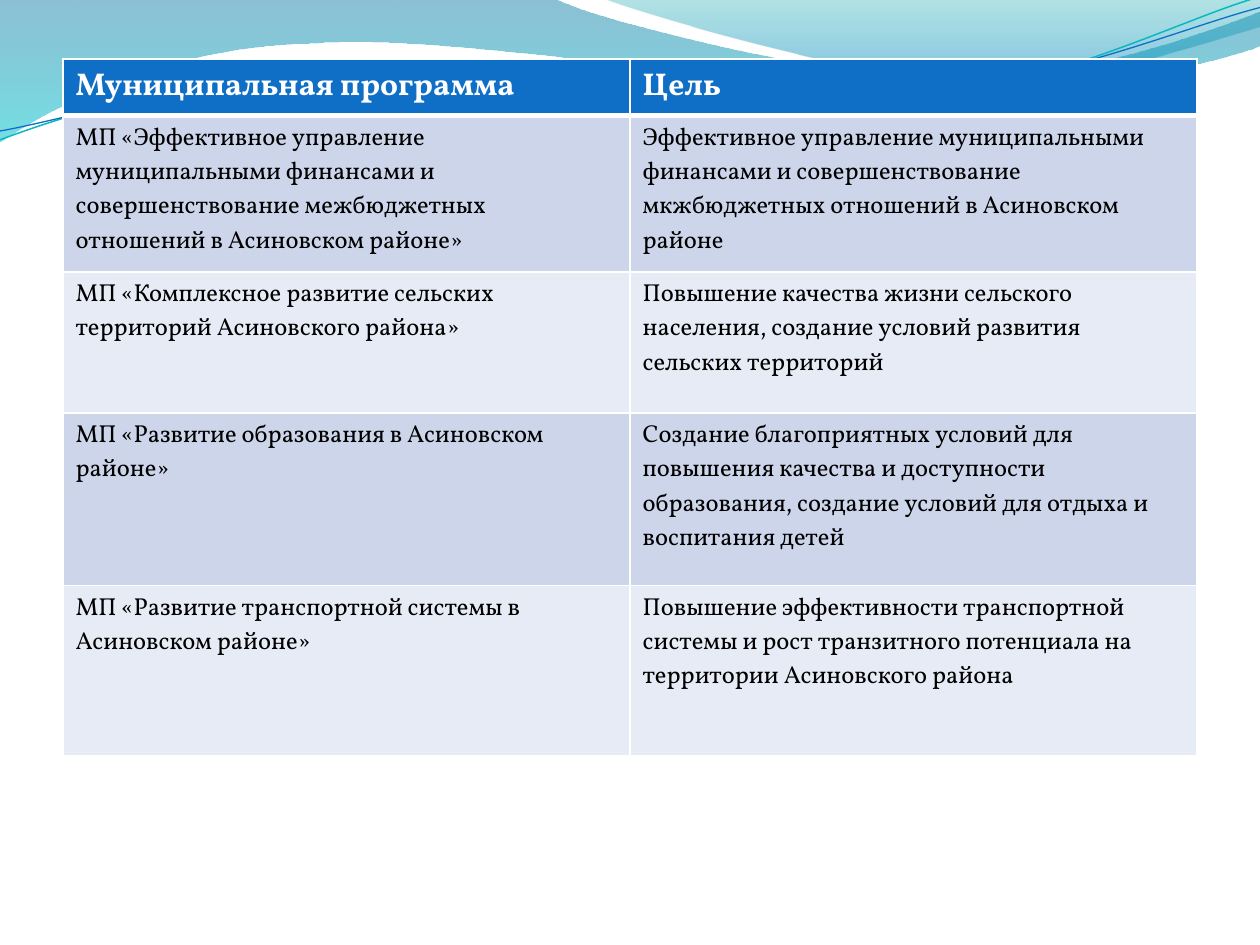
from math import cos, radians, sin

from lxml.etree import SubElement
from pptx import Presentation
from pptx.dml.color import RGBColor
from pptx.oxml import parse_xml
from pptx.oxml.ns import nsdecls, qn
from pptx.util import Inches, Pt

HEADERS = ("Муниципальная программа", "Цель")
PROGRAMS = [
    ("МП «Эффективное управление муниципальными финансами и совершенствование межбюджетных отношений в Асиновском районе»",
     "Эффективное управление муниципальными финансами и совершенствование мкжбюджетных отношений в Асиновском районе"),
    ("МП «Комплексное развитие сельских территорий Асиновского района»",
     "Повышение качества жизни сельского населения, создание условий развития сельских территорий"),
    ("МП «Развитие образования в Асиновском районе»",
     "Создание благоприятных условий для повышения качества и доступности образования, создание условий для отдыха и воспитания детей"),
    ("МП «Развитие транспортной системы в Асиновском районе»",
     "Повышение эффективности транспортной системы и рост транзитного потенциала на территории Асиновского района"),
]
ROW_HEIGHTS = (0.44, 1.24, 1.12, 1.37, 1.35)
TABLE_LEFT, TABLE_TOP, TABLE_WIDTH = 0.5, 0.47, 9

THEME = {
    "font": "Vollkorn",
    "header": {"size": Pt(18), "bold": True, "color": "FFFFFF"},
    "body": {"size": Pt(14), "bold": False, "color": "000000"},
    "header_fill": "0F6FC6",
    "band_fills": ("CCD5EA", "E7EBF5"),
    "border": "FFFFFF",
    "thin": Pt(1),
    "thick": Pt(3),
}

WAVES = [
    {"points": [(0, 0), (4.4, -0.01), (4.76, 0.17, 6.64, 0.63, 7.58, 0.63),
                (8.53, 0.63, 9.58, 0.26, 10, 0.09), (10.01, 0.36),
                (9.83, 0.44, 8.7, 0.76, 7.46, 0.75), (6.22, 0.75, 3.82, 0.28, 2.57, 0.34),
                (1.29, 0.36, 0.46, 0.83, -0.01, 1.13), (0, 0)],
     "stops": [(0, "0074A1", 45), (1, "00C6CF", 55)]},
    {"points": [(4.79, -0.01), (5.09, 0.11, 6.82, 0.62, 7.69, 0.65),
                (8.56, 0.69, 9.61, 0.32, 10, 0.21), (10, 0), (4.79, -0.01)],
     "stops": [(0, "00A1A9", 30), (0.8, "008BBF", 45)]},
    {"points": [(0, 1.11), (0.48, 0.93, 1.58, 0.57, 2.77, 0.52),
                (3.95, 0.47, 5.93, 0.89, 7.13, 0.8), (8.33, 0.71, 9.38, 0.15, 9.98, -0.02)],
     "line": ("0AB8BF", 0.85), "center": (4.99, 0.57), "rotation": -2.7},
    {"points": [(0, 1.04), (0.47, 0.96, 1.64, 0.61, 2.83, 0.56),
                (4.03, 0.51, 5.97, 0.84, 7.17, 0.75), (8.36, 0.67, 9.41, 0.21, 10, 0.06)],
     "line": ("0F6FC6", 0.75), "center": (5, 0.59), "rotation": -2.7},
]


def level(point, center, rotation):
    angle = radians(-rotation)
    center_x, center_y = center
    pairs = [(x - center_x, y - center_y) for x, y in zip(point[::2], point[1::2])]
    return [(Inches(center_x + x * cos(angle) - y * sin(angle)),
             Inches(center_y + x * sin(angle) + y * cos(angle))) for x, y in pairs]


def draw_outline(slide, wave):
    rotation = wave.get("rotation", 0)
    steps = [level(point, wave.get("center", (0, 0)), rotation) for point in wave["points"]]
    start, *anchors = [step[-1] for step in steps]
    builder = slide.shapes.build_freeform(*start)
    builder.add_line_segments(anchors, close="stops" in wave)
    shape = builder.convert_to_shape()
    segments = list(shape.element.spPr.iter(qn("a:lnTo")))
    for segment, step in zip(segments, steps[1:]):
        if len(step) == 3:
            segment.tag = qn("a:cubicBezTo")
            segment.clear()
            for x, y in step:
                point = SubElement(segment, qn("a:pt"))
                point.set("x", str(x - shape.left))
                point.set("y", str(y - shape.top))
    shape.rotation = rotation
    return shape


def add_wave(slide, wave):
    shape = draw_outline(slide, wave)
    shape.shadow.inherit = False
    if "line" in wave:
        color, width = wave["line"]
        shape.fill.background()
        shape.line.color.rgb = RGBColor.from_string(color)
        shape.line.width = Pt(width)
        return
    shape.line.fill.background()
    shape.fill.gradient()
    shape.fill.gradient_angle = 270
    for stop, (position, color, _) in zip(shape.fill.gradient_stops, wave["stops"]):
        stop.position = position
        stop.color.rgb = RGBColor.from_string(color)
    colors = shape.element.spPr.find(qn("a:gradFill")).iter(qn("a:srgbClr"))
    for color_element, (_, _, opacity) in zip(colors, wave["stops"]):
        SubElement(color_element, qn("a:alpha")).set("val", str(opacity * 1000))


def set_borders(cell, widths):
    properties = cell._tc.get_or_add_tcPr()
    for index, (side, width) in enumerate(widths.items()):
        properties.insert(index, parse_xml(
            f'<a:ln{side} {nsdecls("a")} w="{width}"><a:solidFill>'
            f'<a:srgbClr val="{THEME["border"]}"/></a:solidFill></a:ln{side}>'))


def format_cell(cell, text, row):
    is_header = row == 0
    style = THEME["header" if is_header else "body"]
    fill = THEME["header_fill"] if is_header else THEME["band_fills"][(row - 1) % 2]
    cell.text = text
    cell.fill.solid()
    cell.fill.fore_color.rgb = RGBColor.from_string(fill)
    font = cell.text_frame.paragraphs[0].runs[0].font
    for name, value in {"name": THEME["font"], "size": style["size"], "bold": style["bold"]}.items():
        setattr(font, name, value)
    font.color.rgb = RGBColor.from_string(style["color"])
    thin, thick = THEME["thin"], THEME["thick"]
    set_borders(cell, {"L": thin, "R": thin,
                       "T": thick if row == 1 else thin,
                       "B": thick if is_header else thin})


def add_program_table(slide):
    rows = [HEADERS, *PROGRAMS]
    table = slide.shapes.add_table(
        len(rows), len(HEADERS), Inches(TABLE_LEFT), Inches(TABLE_TOP),
        Inches(TABLE_WIDTH), Inches(sum(ROW_HEIGHTS))).table
    for column in table.columns:
        column.width = Inches(TABLE_WIDTH / len(HEADERS))
    for row, (texts, height) in enumerate(zip(rows, ROW_HEIGHTS)):
        table.rows[row].height = Inches(height)
        for column, text in enumerate(texts):
            format_cell(table.cell(row, column), text, row)


def main():
    presentation = Presentation()
    presentation.slide_width, presentation.slide_height = Inches(10), Inches(7.5)
    slide = presentation.slides.add_slide(presentation.slide_layouts[6])
    for wave in WAVES:
        add_wave(slide, wave)
    add_program_table(slide)
    presentation.save("out.pptx")


if __name__ == "__main__":
    main()
